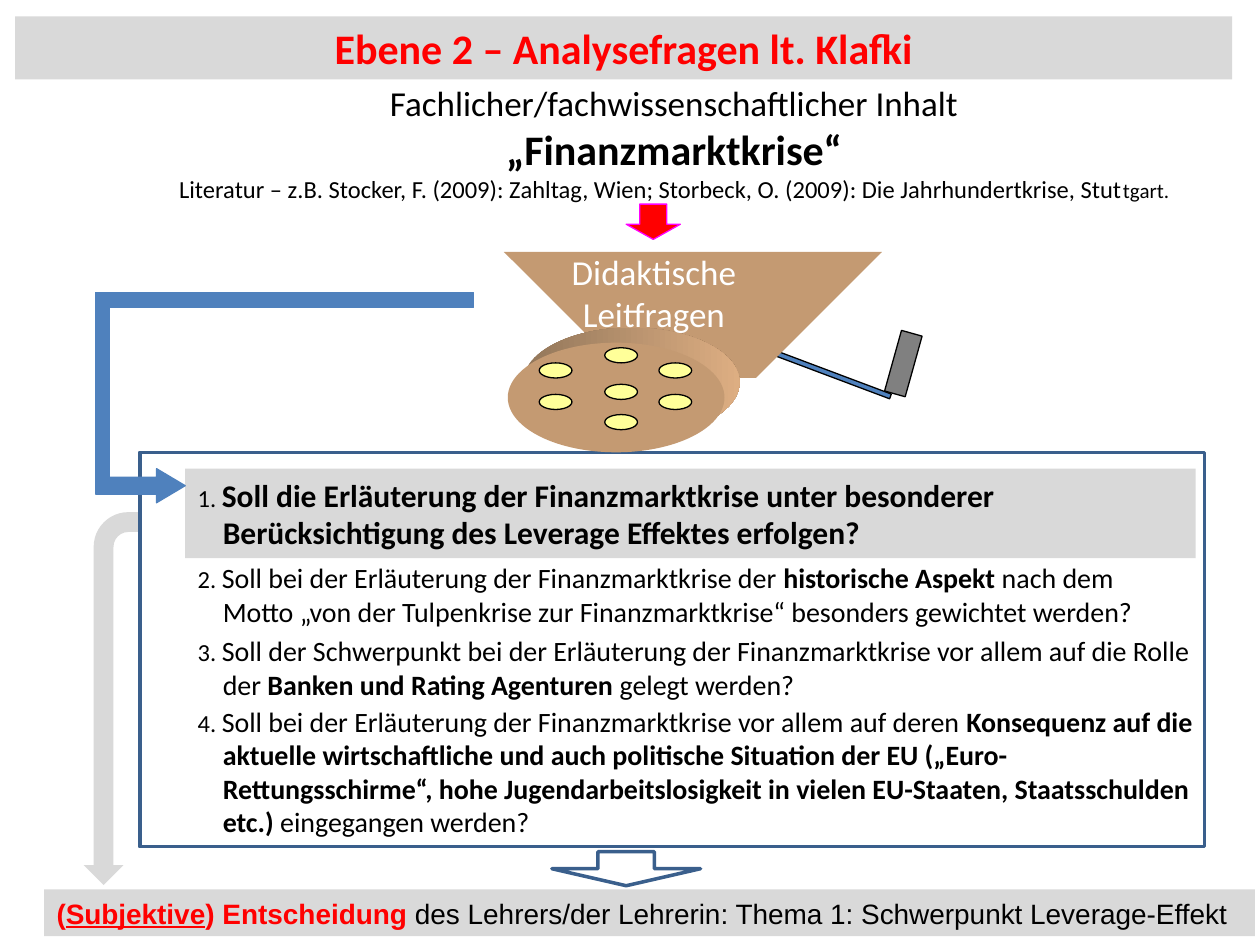
from pptx import Presentation
from pptx.dml.color import RGBColor
from pptx.enum.shapes import MSO_SHAPE as Preset
from pptx.enum.text import MSO_ANCHOR as Anchor, PP_ALIGN as Align
from pptx.util import Inches, Pt

W, H = 10, 7.5
COLORS = {
    "white": "FFFFFF", "black": "000000", "red": "FF0000", "magenta": "FF00FF",
    "band": "D9D9D9", "navy": "3A5F8C", "blue": "4F81BD", "handle": "808080",
    "hole": "FFFF99", "wood": "C49A72", "wood_dark": "92765A", "wood_light": "DDAE82",
}

# A run is (text, format); each format value lasts until a later run changes it.
TITLE = [[("Ebene 2 – Analysefragen lt. Klafki", {"size": 24, "bold": True, "color": "red"})]]
SUBJECT = [
    [("Fachlicher/fachwissenschaftlicher Inhalt", {"size": 20})],
    [("„Finanzmarktkrise“", {"size": 24, "bold": True})],
    [("Literatur – z.B. Stocker, F. (2009): Zahltag, Wien; Storbeck, O. (2009): "
      "Die Jahrhundertkrise, Stut", {"size": 14}), ("tgart.", {"size": 12})],
]
FUNNEL_LABEL = [[(word, {"size": 20, "color": "white"})] for word in ("Didaktische", "Leitfragen")]
DECISION = [[
    ("(", {"size": 16, "bold": True, "color": "red", "name": "Arial"}),
    ("Subjektive", {"underline": True}),
    (") Entscheidung", {"underline": False}),
    (" des Lehrers/der Lehrerin: Thema 1: Schwerpunkt Leverage-Effekt",
     {"color": "black", "bold": False}),
]]
# top, width, height, text size, band colour, parts (every second part is bold)
QUESTIONS = [
    (3.72, 8.02, 0.71, 18, "band",
     ["", "Soll die Erläuterung der Finanzmarktkrise unter besonderer "
      "Berücksichtigung des Leverage Effektes erfolgen?"]),
    (4.40, 7.87, 0.64, 16, None,
     ["Soll bei der Erläuterung der Finanzmarktkrise der ", "historische Aspekt ",
      "nach dem Motto „von der Tulpenkrise zur Finanzmarktkrise“ besonders gewichtet werden?"]),
    (4.98, 8.12, 0.64, 16, None,
     ["Soll der Schwerpunkt bei der Erläuterung der Finanzmarktkrise vor allem auf die Rolle der ",
      "Banken und Rating Agenturen ", "gelegt werden?"]),
    (5.54, 8.18, 1.18, 16, None,
     ["Soll bei der Erläuterung der Finanzmarktkrise vor allem auf deren ",
      "Konsequenz auf die aktuelle wirtschaftliche und auch politische Situation der EU "
      "(„Euro-Rettungsschirme“, hohe Jugendarbeitslosigkeit in vielen EU-Staaten, "
      "Staatsschulden etc.) ", "eingegangen werden?"]),
]
QUESTION_LEFT = 1.47
FUNNEL_FACES = [
    ("wood_dark", [(4.03, 2), (4.35, 1.87), (6.54, 1.87), (6.41, 2)]),
    ("wood", [(4.03, 2), (6.41, 2), (6.54, 1.87), (5.95, 2.94), (4.51, 2.94)]),
]
HOLES = [(4.28, 2.88), (4.28, 3.13), (4.8, 2.76), (4.8, 3.05),
         (4.8, 3.29), (5.23, 2.88), (5.23, 3.13)]

prs = Presentation()
prs.slide_width, prs.slide_height = Inches(W), Inches(H)
slide = prs.slides.add_slide(prs.slide_layouts[6])


def rgb(color):
    return RGBColor.from_string(COLORS[color])


def paint(shape, fill, line=None, weight=0.75):
    shape.shadow.inherit = False
    shape.fill.solid()
    shape.fill.fore_color.rgb = rgb(fill)
    if line:
        shape.line.color.rgb = rgb(line)
        shape.line.width = Pt(weight)
    else:
        shape.line.fill.background()
    return shape


def draw(preset, box, fill, line=None, weight=0.75, rotation=0, adjust=()):
    shape = slide.shapes.add_shape(preset, *map(Inches, box))
    shape.rotation = rotation
    for i, value in enumerate(adjust):
        shape.adjustments[i] = value
    return paint(shape, fill, line, weight)


def write(paragraphs, box, band=None, align=Align.LEFT, wrap=True, hanging=0):
    """Put text in a box, on a coloured band if one is named."""
    if band:
        holder = draw(Preset.RECTANGLE, box, band)
    else:
        holder = slide.shapes.add_textbox(*map(Inches, box))
    frame = holder.text_frame
    frame.word_wrap = wrap
    frame.vertical_anchor = Anchor.MIDDLE if band else Anchor.TOP
    for i, runs in enumerate(paragraphs):
        paragraph = frame.add_paragraph() if i else frame.paragraphs[0]
        paragraph.alignment = align
        if hanging:
            props = paragraph._p.get_or_add_pPr()
            props.set("marL", str(Inches(hanging)))
            props.set("indent", str(-Inches(hanging)))
        style = {"name": "Calibri", "color": "black", "bold": False}
        for text, changes in runs:
            style.update(changes)
            run = paragraph.add_run()
            run.text = text
            for key, value in style.items():
                if key == "color":
                    run.font.color.rgb = rgb(value)
                else:
                    setattr(run.font, key, Pt(value) if key == "size" else value)


def draw_funnel():
    draw(Preset.RECTANGLE, (5.49, 2.84, 1.63, 0.04), "blue", "black", rotation=20.6)
    for color, points in FUNNEL_FACES:
        outline = slide.shapes.build_freeform(*points[0], scale=Inches(1))
        outline.add_line_segments(points[1:])
        paint(outline.convert_to_shape(), color)
    left, top, width, height = 4.03, 2.72, 1.72, 0.87
    rim = draw(Preset.OVAL, (left + 0.12, top - 0.12, width, height), "wood")
    rim.fill.gradient()
    rim.fill.gradient_angle = 0
    for stop, color in zip(rim.fill.gradient_stops, ("wood_dark", "wood_light")):
        stop.color.rgb = rgb(color)
    draw(Preset.OVAL, (left, top, width, height), "wood")
    for x, y in HOLES:
        draw(Preset.OVAL, (x, y, 0.26, 0.12), "hole", "black")
    draw(Preset.RECTANGLE, (6.92, 2.8, 0.5, 0.17), "handle", "black", rotation=285.6)
    write(FUNNEL_LABEL, (4.43, 1.94, 1.52, 0.77), align=Align.CENTER, wrap=False)


def draw_questions():
    for number, (top, width, height, size, band, parts) in enumerate(QUESTIONS, 1):
        runs = [(f"{number}. ", {"size": 14})]
        runs += [(part, {"size": size, "bold": i % 2 == 1})
                 for i, part in enumerate(parts) if part]
        write([runs], (QUESTION_LEFT, top, width, height), band, hanging=0.2)


def draw_feed_arrow():
    """Blue path from the funnel to the first question."""
    for preset, box, rotation, adjust in [
        (Preset.RECTANGLE, (0.76, 2.32, 3, 0.12), 0, ()),
        (Preset.RECTANGLE, (0.02, 3.06, 1.59, 0.11), 270, ()),
        (Preset.RIGHT_ARROW, (0.76, 3.72, 0.71, 0.27), 0, (0.5, 0.84)),
    ]:
        draw(preset, box, "blue", "blue", rotation=rotation, adjust=adjust)


def main():
    result_arrow = draw(Preset.BENT_ARROW, (-0.5, 5.23, 2.96, 0.63), "band", rotation=270)
    result_arrow._element.spPr.get_or_add_xfrm().set("flipH", "1")
    draw(Preset.RECTANGLE, (1.11, 3.59, 8.45, 3.13), "white", "navy", 2)
    write(SUBJECT, (1.29, 0.6, 8.12, 1.08), align=Align.CENTER, wrap=False)
    draw(Preset.DOWN_ARROW, (4.97, 1.62, 0.43, 0.28), "red", "magenta", adjust=(0.5, 0.43))
    draw_funnel()
    draw_questions()
    draw(Preset.DOWN_ARROW, (4.38, 6.76, 1.18, 0.27), "white", "navy", 2, adjust=(0.38, 0.5))
    write(DECISION, (0.35, 7.06, 9.61, 0.37), "band", wrap=False)
    draw_feed_arrow()
    write(TITLE, (0.12, 0.13, 9.66, 0.5), "band", Align.CENTER)
    prs.save("out.pptx")


if __name__ == "__main__":
    main()
